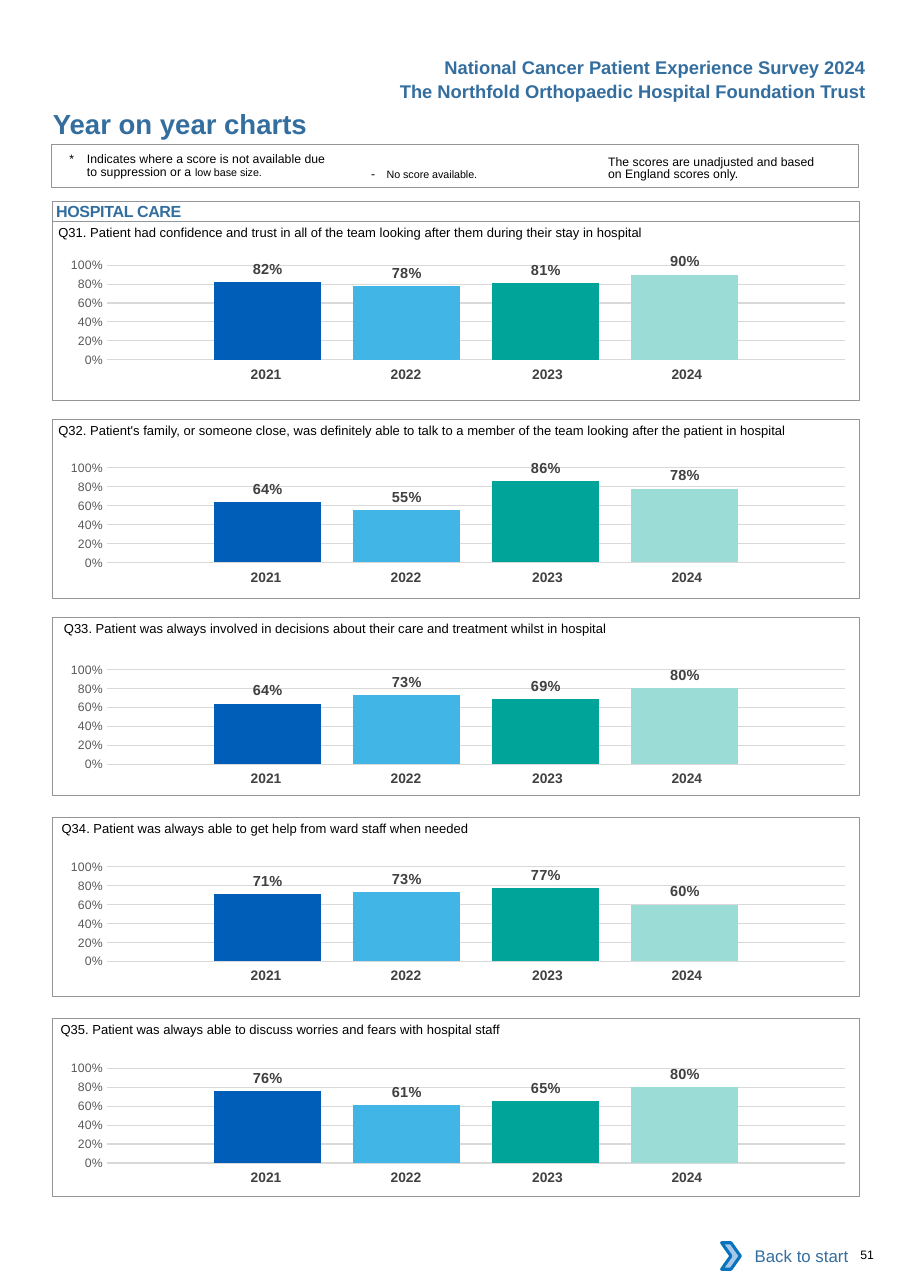
from pptx import Presentation
from pptx.chart.data import CategoryChartData
from pptx.dml.color import RGBColor
from pptx.enum.chart import XL_CHART_TYPE, XL_LABEL_POSITION, XL_TICK_MARK
from pptx.enum.shapes import MSO_SHAPE
from pptx.enum.text import MSO_ANCHOR, PP_ALIGN
from pptx.oxml import parse_xml
from pptx.oxml.ns import nsdecls
from pptx.util import Inches, Pt

BLUE, GREY, BLACK = "336E9F", "939598", "000000"
LEFT, WIDE = 0.48, 7.32
YEARS = ["2021", "2022", "2023", "2024"]
BARS = ["005EB8", "41B6E6", "00A499", "9CDCD7"]
COLS = [1.27, 1.27, 1.34, 1.27]
PADS = [0, 0, 0.04, 0.12]

# panel top, chart offset, question left, question, scores
PANELS = [
    (2.01, 0.21, 0.53, "Q31. Patient had confidence and trust in all of the team "
     "looking after them during their stay in hospital", [0.82, 0.78, 0.81, 0.9]),
    (3.81, 0.25, 0.53, "Q32. Patient's family, or someone close, was definitely able to "
     "talk to a member of the team looking after the patient in hospital",
     [0.64, 0.55, 0.86, 0.78]),
    (5.6, 0.29, 0.58, "Q33. Patient was always involved in decisions about their care "
     "and treatment whilst in hospital", [0.64, 0.73, 0.69, 0.8]),
    (7.42, 0.26, 0.56, "Q34. Patient was always able to get help from ward staff when "
     "needed", [0.71, 0.73, 0.77, 0.6]),
    (9.24, 0.27, 0.55, "Q35. Patient was always able to discuss worries and fears with "
     "hospital staff", [0.76, 0.61, 0.65, 0.8]),
]


def color(code):
    return RGBColor.from_string(code)


def box(*sides):
    return [Inches(side) for side in sides]


def style(font, size, code, bold=False):
    font.name, font.size, font.bold = "Arial", Pt(size), bold
    font.color.rgb = color(code)


def write(shape, text, size, code=BLACK, bold=False, align=PP_ALIGN.LEFT, pads=(0, 0)):
    frame = shape.text_frame
    frame.word_wrap = True
    frame.vertical_anchor = MSO_ANCHOR.MIDDLE
    frame.margin_left, frame.margin_right = box(*pads)
    frame.margin_top = frame.margin_bottom = 0
    para = frame.paragraphs[0]
    para.text, para.alignment = text, align
    style(para.font, size, code, bold)
    return para


def label(slide, area, text, size, **look):
    return write(slide.shapes.add_textbox(*box(*area)), text, size, **look)


def draw(slide, kind, area, fill=None, line=None, width=0.5):
    shape = slide.shapes.add_shape(kind, *box(*area))
    shape.shadow.inherit = False
    if fill:
        shape.fill.solid()
        shape.fill.fore_color.rgb = color(fill)
    else:
        shape.fill.background()
    if line:
        shape.line.color.rgb = color(line)
        shape.line.width = Pt(width)
    else:
        shape.line.fill.background()
    return shape


def header(slide, left, top):
    lines = ["National Cancer Patient Experience Survey 2024",
             "The Northfold Orthopaedic Hospital Foundation Trust"]
    for row, text in enumerate(lines):
        label(slide, (left + 2.5, top + row * 0.22, 4.88, 0.3), text, 12,
              code=BLUE, bold=True, align=PP_ALIGN.RIGHT)
    label(slide, (left, top + 0.51, 4.5, 0.3), "Year on year charts", 18,
          code=BLUE, bold=True)


def legend(slide, left, top):
    draw(slide, MSO_SHAPE.RECTANGLE, (left, top, WIDE, 0.39), line=GREY, width=0.75)
    # suppression note with a hanging star
    note = label(slide, (left + 0.16, top + 0.07, 2.4, 0.26),
                 "*\tIndicates where a score is not available due to suppression or a ", 8)
    note.line_spacing = Pt(8.1)
    props = note._p.get_or_add_pPr()
    props.set("marL", str(Inches(0.16)))
    props.set("indent", str(-Inches(0.16)))
    tail = note.add_run()
    tail.text, tail.font.size = "low base size.", Pt(7)
    # missing score
    label(slide, (left + 2.9, top + 0.19, 0.14, 0.16), "-", 8)
    label(slide, (left + 3.04, top + 0.19, 1.5, 0.16), "No score available.", 7)
    # basis of scores
    basis = label(slide, (left + 5.05, top + 0.09, 1.95, 0.26),
                  "The scores are unadjusted and based on England scores only.", 8)
    basis.line_spacing = Pt(8.1)


def years(slide, left, top):
    grid = slide.shapes.add_table(1, 4, *box(left, top, sum(COLS), 0.27)).table
    grid.first_row = grid.horz_banding = False
    for col, (year, width, pad) in enumerate(zip(YEARS, COLS, PADS)):
        grid.columns[col].width = Inches(width)
        cell = grid.cell(0, col)
        cell.fill.background()
        cell.margin_left, cell.margin_right = box(0.1, pad)
        para = cell.text_frame.paragraphs[0]
        para.text, para.alignment = year, PP_ALIGN.CENTER
        style(para.font, 9, "414042", True)


def bars(slide, left, top, scores):
    data = CategoryChartData(number_format="0%")
    data.categories = ["1"]
    for num, score in enumerate(scores, 1):
        data.add_series(f"Series {num}", [score])
    chart = slide.shapes.add_chart(XL_CHART_TYPE.COLUMN_CLUSTERED,
                                   *box(left, top, WIDE, 1.29), data).chart
    chart.has_legend = chart.has_title = False
    chart.font.name, chart.font.size = "Calibri", Pt(10)
    chart.font.color.rgb = color(BLACK)
    # axes
    chart.category_axis.visible = False
    axis = chart.value_axis
    axis.minimum_scale, axis.maximum_scale, axis.major_unit = 0, 1, 0.2
    axis.major_tick_mark = axis.minor_tick_mark = XL_TICK_MARK.NONE
    axis.format.line.fill.background()
    axis.major_gridlines.format.line.color.rgb = color("D9D9D9")
    axis.major_gridlines.format.line.width = Pt(0.75)
    axis.tick_labels.number_format = "0%"
    axis.tick_labels.number_format_is_linked = False
    style(axis.tick_labels.font, 8, "595959")
    # columns
    plot = chart.plots[0]
    plot.gap_width, plot.overlap, plot.vary_by_categories = 200, -30, False
    for series, code in zip(plot.series, BARS):
        series.format.fill.solid()
        series.format.fill.fore_color.rgb = color(code)
        marks = series.data_labels
        marks.show_value = True
        marks.position = XL_LABEL_POSITION.OUTSIDE_END
        marks.number_format, marks.number_format_is_linked = "0%", False
        style(marks.font, 9.5, "404040", True)
    # fixed plot area
    area = chart._chartSpace.chart.plotArea
    for old in area.findall("{*}layout"):
        area.remove(old)
    sides = "".join(f'<c:{key} val="{val}"/>' for key, val in [
        ("layoutTarget", "inner"), ("xMode", "edge"), ("yMode", "edge"),
        ("x", 0.08), ("y", 0.145), ("w", 0.915), ("h", 0.666)])
    area.insert(0, parse_xml(f'<c:layout {nsdecls("c")}><c:manualLayout>{sides}'
                             '</c:manualLayout></c:layout>'))


def panel(slide, top, drop, start, text, scores):
    years(slide, LEFT + 1.25, top + drop + 1.06)
    bars(slide, LEFT - 0.09, top + drop, scores)
    label(slide, (start, top, LEFT + WIDE - start, 0.2), text, 8.5)
    draw(slide, MSO_SHAPE.RECTANGLE, (LEFT, top, WIDE, 1.62), line=GREY)


def footer(slide, left, top):
    back = draw(slide, MSO_SHAPE.RECTANGLE, (left + 0.07, top, 1.18, 0.42), fill="FFFFFF")
    write(back, "Back to start", 11, BLUE, align=PP_ALIGN.RIGHT, pads=(0.1, 0.1))
    draw(slide, MSO_SHAPE.CHEVRON, (left, top + 0.09, 0.17, 0.24),
         fill="A8C7E9", line="0A74BB", width=2)
    label(slide, (left + 1.26, top + 0.13, 0.4, 0.14), "51", 8)


def main():
    deck = Presentation()
    deck.slide_width, deck.slide_height = box(8.26, 11.69)
    slide = deck.slides.add_slide(deck.slide_layouts[6])
    header(slide, LEFT, 0.46)
    legend(slide, LEFT - 0.01, 1.31)
    # section heading
    head = draw(slide, MSO_SHAPE.RECTANGLE, (LEFT, 1.83, WIDE, 0.18), line=GREY)
    para = write(head, "HOSPITAL CARE", 10.5, BLUE, True, pads=(0.03, 0))
    para.font._rPr.set("spc", "-20")
    for row in PANELS:
        panel(slide, *row)
    footer(slide, 6.55, 11.19)
    deck.save("out.pptx")


if __name__ == "__main__":
    main()
